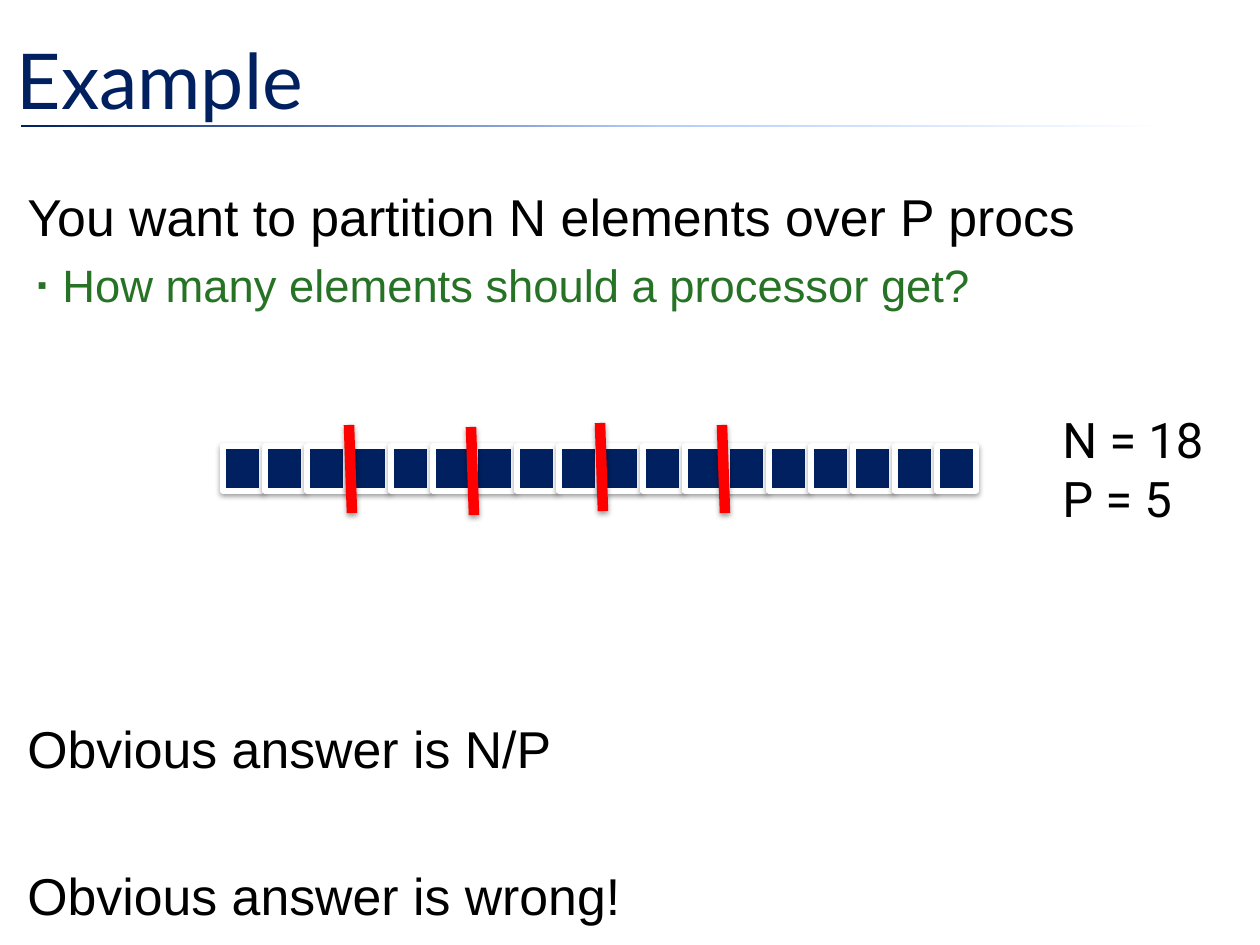
import pptx
import pptx.util
import pptx.dml.color
import pptx.enum.text
import pptx.enum.shapes
import pptx.oxml.ns
from lxml import etree

TITLE = "Example"
BODY = [
    ("You want to partition N elements over P procs", "point", 0),
    ("How many elements should a processor get?", "question", 6),
    ("Obvious answer is N/P", "point", 231),
    ("Obvious answer is wrong!", "point", 49),
]
VALUES = [("N = 18", "value", 0), ("P = 5", "value", 0)]
ELEMENTS = 18
DIVIDERS = [(349, 425), (471, 427), (600, 423), (722, 425)]

THEME = {
    "navy": "002060",
    "white": "FFFFFF",
    "cut": "FF0000",
    "shadow": "000000",
    "rule": [(0, "002060"), (52, "B4CDFF"), (93, "FFFFFF")],
    "text": {
        "title": {"name": "Lato", "size": 44, "color": "002060"},
        "point": {"name": "Arial", "size": 29.6, "color": "000000"},
        "question": {"name": "Arial", "size": 25.9, "color": "267326"},
        "value": {"name": "Roboto", "size": 28, "color": "000000"},
    },
}
INDENTS = {"point": (15, 0), "question": (50, -25), "value": (0, 0)}
BULLETS = {"question": "▪"}

ANCHOR = pptx.enum.text.MSO_ANCHOR
AUTOSIZE = pptx.enum.text.MSO_AUTO_SIZE
RECTANGLE = pptx.enum.shapes.MSO_SHAPE.RECTANGLE
STRAIGHT = pptx.enum.shapes.MSO_CONNECTOR.STRAIGHT
EMU_PER_PX = 914400 / 126


def px(*lengths):
    return [pptx.util.Emu(round(length * EMU_PER_PX)) for length in lengths]


def rgb(code):
    return pptx.dml.color.RGBColor.from_string(code)


def apply(target, formats):
    for attribute, value in formats.items():
        setattr(target, attribute, value)


def child(parent, tag, **attributes):
    return etree.SubElement(parent, pptx.oxml.ns.qn(tag), attributes)


def write(paragraph, words, role):
    style = THEME["text"][role]
    run = paragraph.add_run()
    run.text = words
    apply(run.font, {"name": style["name"], "size": pptx.util.Pt(style["size"])})
    run.font.color.rgb = rgb(style["color"])


def write_lines(frame, lines):
    for number, (words, role, gap) in enumerate(lines):
        paragraph = frame.add_paragraph() if number else frame.paragraphs[0]
        write(paragraph, words, role)
        paragraph.space_before = pptx.util.Pt(gap)
        properties = paragraph._p.get_or_add_pPr()
        for key, length in zip(("marL", "indent"), px(*INDENTS[role])):
            properties.set(key, str(length))
        if role in BULLETS:
            child(properties, "a:buSzPct", val="60000")
            child(properties, "a:buFont", typeface="Arial")
            child(properties, "a:buChar", char=BULLETS[role])


def cast_shadow(part):
    effects = child(part._element.spPr, "a:effectLst")
    shadow = child(effects, "a:outerShdw", blurRad="40000", dist="20000",
                   dir="5400000", rotWithShape="0")
    color = child(shadow, "a:srgbClr", val=THEME["shadow"])
    child(color, "a:alpha", val="38000")


def outline(part, color, points):
    part.line.color.rgb = rgb(color)
    part.line.width = pptx.util.Pt(points)


def add_rule(slide):
    rule = slide.shapes.add_shape(RECTANGLE, *px(21, 125, 1239, 2))
    rule.shadow.inherit = False
    rule.line.fill.background()
    rule.fill.gradient()
    rule.fill.gradient_angle = 0
    stops = rule._element.spPr.find(".//" + pptx.oxml.ns.qn("a:gsLst"))
    for stop in list(stops):
        stops.remove(stop)
    for percent, color in THEME["rule"]:
        stop = child(stops, "a:gs", pos=str(percent * 1000))
        child(stop, "a:srgbClr", val=color)


def add_elements(slide):
    elements = slide.shapes.add_group_shape()
    for number in range(ELEMENTS):
        element = elements.shapes.add_shape(
            RECTANGLE, *px(223 + 42 * number, 446, 39, 45))
        element.fill.solid()
        element.fill.fore_color.rgb = rgb(THEME["navy"])
        outline(element, THEME["white"], 3)
        cast_shadow(element)


def add_dividers(slide):
    dividers = slide.shapes.add_group_shape()
    for left, top in DIVIDERS:
        divider = dividers.shapes.add_connector(
            STRAIGHT, *px(left, top, left + 3, top + 88))
        outline(divider, THEME["cut"], 6)
        cast_shadow(divider)


def main():
    deck = pptx.Presentation()
    apply(deck, dict(zip(("slide_width", "slide_height"), px(1260, 945))))
    slide = deck.slides.add_slide(deck.slide_layouts[5])
    add_rule(slide)

    title = slide.shapes.title
    apply(title, dict(zip(("left", "top", "width", "height"), px(4, 0, 1197, 158))))
    apply(title.text_frame, {"vertical_anchor": ANCHOR.MIDDLE, "word_wrap": True,
                             "auto_size": AUTOSIZE.NONE})
    heading = title.text_frame.paragraphs[0]
    heading.alignment = pptx.enum.text.PP_ALIGN.LEFT
    write(heading, TITLE, "title")

    body = slide.shapes.add_textbox(*px(0, 176, 1239, 655)).text_frame
    apply(body, {"word_wrap": True, "margin_top": px(9)[0]})
    write_lines(body, BODY)

    add_elements(slide)
    add_dividers(slide)

    values = slide.shapes.add_textbox(*px(1050, 403, 179, 131)).text_frame
    apply(values, {"word_wrap": False, "auto_size": AUTOSIZE.SHAPE_TO_FIT_TEXT})
    write_lines(values, VALUES)
    deck.save("out.pptx")


if __name__ == "__main__":
    main()
